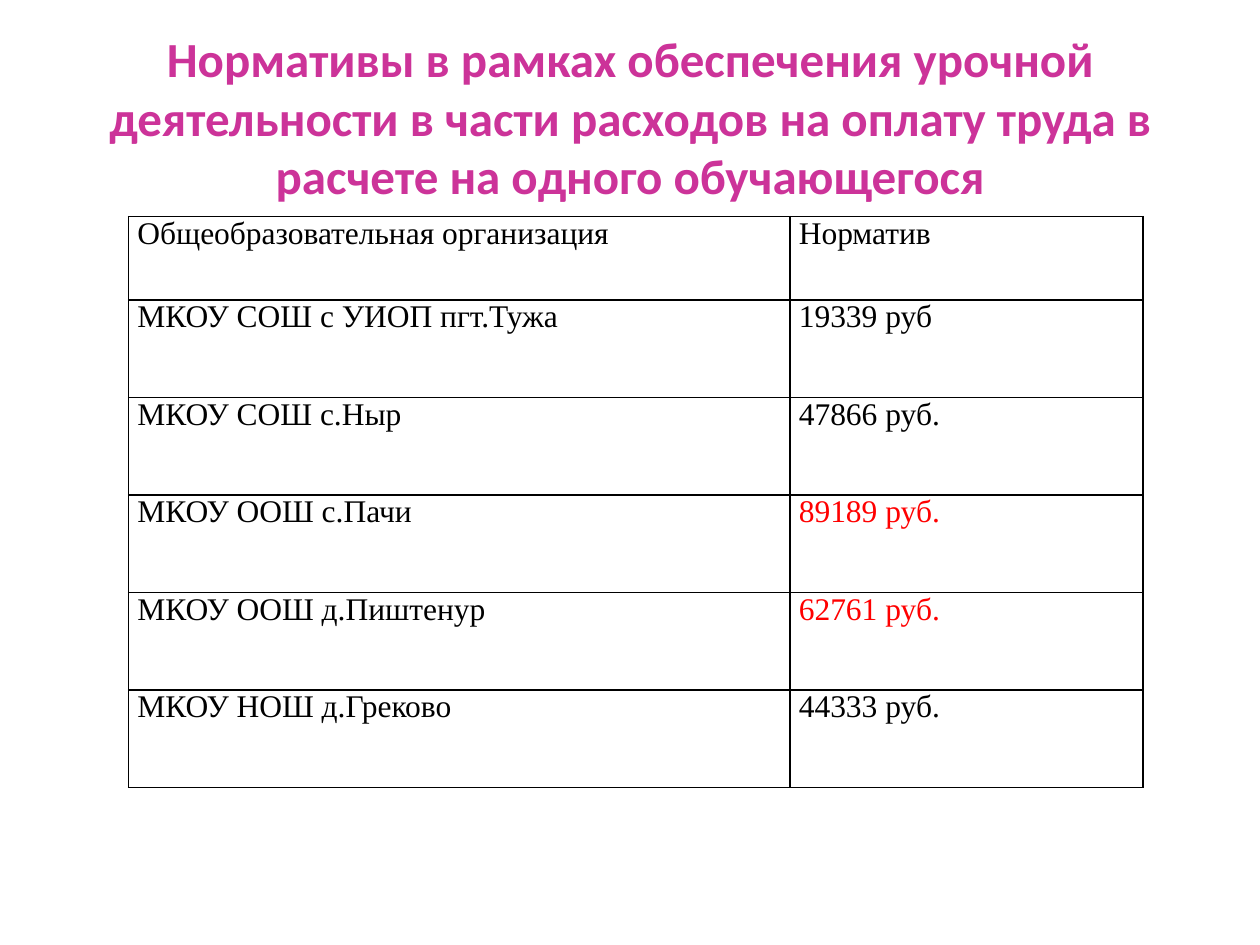
"""Build a slide with a table of school funding norms per pupil."""
import pptx
import pptx.dml.color
import pptx.enum.text
import pptx.oxml
import pptx.oxml.ns
import pptx.util

PINK = pptx.dml.color.RGBColor(0xCC, 0x33, 0x99)
BLACK = pptx.dml.color.RGBColor(0, 0, 0)
RED = pptx.dml.color.RGBColor(0xFF, 0, 0)
Inches = pptx.util.Inches
Pt = pptx.util.Pt
ALIGN = pptx.enum.text.PP_ALIGN


def add_span(para, text, font, size, color, bold):
    span = para.add_run()
    span.text = text
    span.font.name = font
    span.font.size = Pt(size)
    span.font.bold = bold
    span.font.color.rgb = color


def add_borders(cell):
    properties = cell._tc.get_or_add_tcPr()
    for position, side in enumerate(("lnL", "lnR", "lnT", "lnB")):
        border = pptx.oxml.parse_xml(
            f'<a:{side} {pptx.oxml.ns.nsdecls("a")} w="{Pt(1)}"><a:solidFill>'
            f'<a:srgbClr val="{BLACK}"/></a:solidFill></a:{side}>'
        )
        properties.insert(position, border)


deck = pptx.Presentation()
deck.slide_width = Inches(10)
deck.slide_height = Inches(7.5)
page = deck.slides.add_slide(deck.slide_layouts[5])

title = page.shapes.title
title.left, title.top = int(deck.slide_width * 0.05), int(deck.slide_height * 0.04)
title.width, title.height = int(deck.slide_width * 0.9), Inches(1.25)
title.text_frame.word_wrap = True
title.text_frame.vertical_anchor = pptx.enum.text.MSO_ANCHOR.MIDDLE
heading = title.text_frame.paragraphs[0]
heading.alignment = ALIGN.CENTER
add_span(
    heading,
    "Нормативы в рамках обеспечения урочной деятельности в части расходов "
    "на оплату труда в расчете на одного обучающегося",
    "Calibri", 28, PINK, True,
)

norms = [
    ("Общеобразовательная организация", "Норматив", BLACK),
    ("МКОУ СОШ с УИОП пгт.Тужа", "19339 руб", BLACK),
    ("МКОУ СОШ с.Ныр", "47866 руб.", BLACK),
    ("МКОУ ООШ с.Пачи", "89189 руб.", RED),
    ("МКОУ ООШ д.Пиштенур", "62761 руб.", RED),
    ("МКОУ НОШ д.Греково", "44333 руб.", BLACK),
]
column_widths = [5.25, 2.8]
row_heights = [0.66] + [0.774] * (len(norms) - 1)
table = page.shapes.add_table(
    len(norms), len(column_widths), Inches(1.02), Inches(1.72),
    Inches(sum(column_widths)), Inches(sum(row_heights)),
).table
table.first_row = False
table.horz_banding = False
for column, width in zip(table.columns, column_widths):
    column.width = Inches(width)

for row, height, (school, norm, norm_color) in zip(table.rows, row_heights, norms):
    row.height = Inches(height)
    for cell, text, color in zip(row.cells, (school, norm), (BLACK, norm_color)):
        cell.margin_left = cell.margin_right = Inches(0.07)
        cell.margin_top = cell.margin_bottom = 0
        cell.fill.background()
        add_borders(cell)
        add_span(cell.text_frame.paragraphs[0], text, "Times New Roman", 18, color, False)

table.cell(2, 1).text_frame.paragraphs[0].alignment = ALIGN.JUSTIFY

deck.save("out.pptx")
